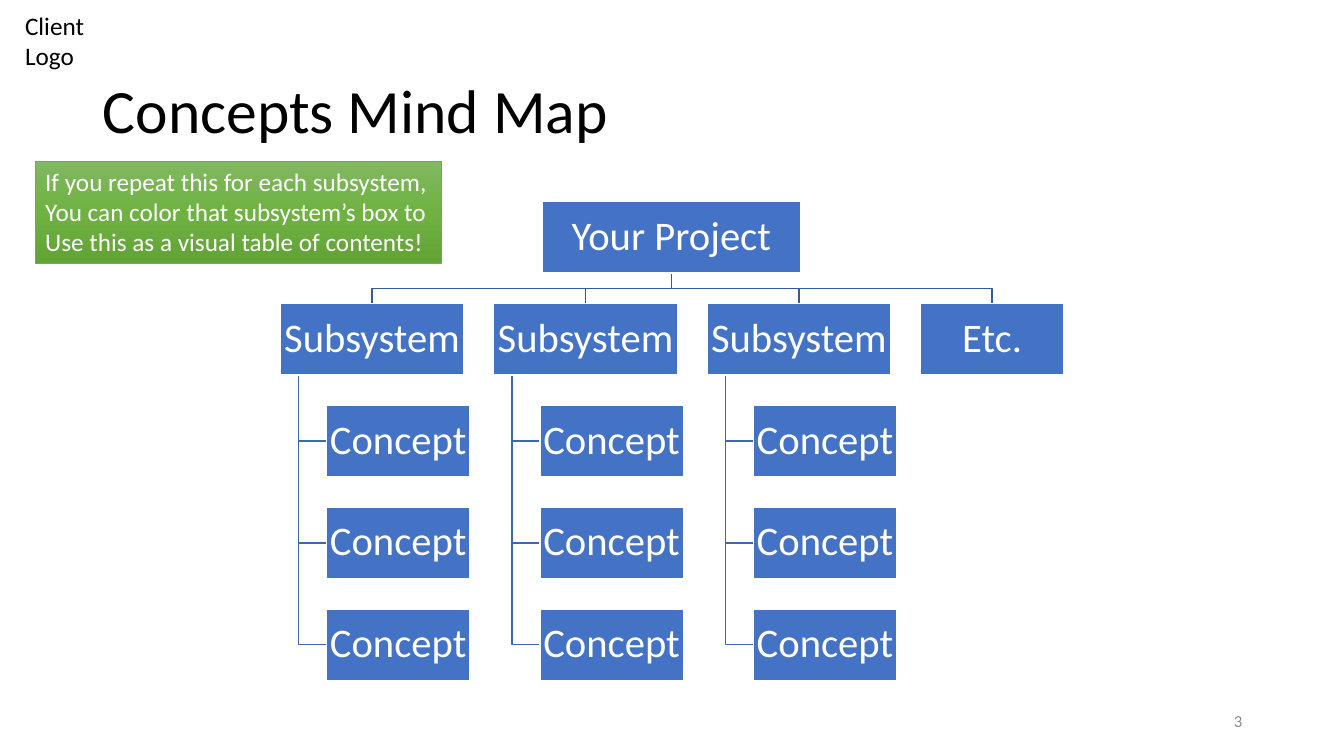
from copy import deepcopy
from dataclasses import dataclass

from pptx import Presentation
from pptx.dml.color import RGBColor
from pptx.enum.shapes import MSO_SHAPE
from pptx.enum.text import MSO_ANCHOR, MSO_AUTO_SIZE, PP_ALIGN
from pptx.oxml.ns import qn
from pptx.util import Inches, Pt

RECT = MSO_SHAPE.RECTANGLE
MIDDLE = MSO_ANCHOR.MIDDLE
TOP = MSO_ANCHOR.TOP
LEFT = PP_ALIGN.LEFT
CENTER = PP_ALIGN.CENTER
RIGHT = PP_ALIGN.RIGHT
NO_FIT = MSO_AUTO_SIZE.NONE


@dataclass(frozen=True)
class Theme:
    face: str = "Calibri"
    black: str = "000000"
    white: str = "FFFFFF"
    gray: str = "8C8C8C"
    blue: str = "4472C4"
    upper: str = "365B9D"
    lower: str = "3E67B2"
    green: str = "70AD47"
    fade: tuple = ("81B861", "6FB242", "62A336")
    title: int = 44
    node: int = 29
    body: int = 18
    small: int = 12


THEME = Theme()
ROOT = "Your Project"
TREE = [
    ("Subsystem", 1.82, ["Concept"] * 3),
    ("Subsystem", 1.82, ["Concept"] * 3),
    ("Subsystem", 1.82, ["Concept"] * 3),
    ("Etc.", 1.42, []),
]
HINT = [
    "If you repeat this for each subsystem,",
    "You can color that subsystem’s box to",
    "Use this as a visual table of contents!",
]
HIGH = 0.71
STEP = 1.01
FIRST = 2.78
PITCH = 6.35 / 3
ROOT_TOP = 2
ROOT_LEFT = 5.38
ROOT_WIDE = 2.56
LEAF_WIDE = 1.42
LEAF_IN = 0.46
STEM_IN = 0.18


def apply(target, values):
    for name, value in values.items():
        setattr(target, name, value)


def color(code):
    return RGBColor.from_string(code)


def write(frame, lines, size, ink, align=LEFT, space=1.0, **values):
    apply(frame, {"word_wrap": True, "auto_size": NO_FIT, **values})
    for index, line in enumerate(lines):
        para = frame.paragraphs[0] if index == 0 else frame.add_paragraph()
        para.text = line
        apply(para, {"alignment": align, "line_spacing": space})
        for run in para.runs:
            apply(run.font, {"name": THEME.face, "size": Pt(size)})
            run.font.color.rgb = color(ink)


def stroke(shape, ink, width):
    shape.shadow.inherit = False
    shape.line.color.rgb = color(ink)
    shape.line.width = Pt(width)


def label(slide, place, text, size, ink, **values):
    box = slide.shapes.add_textbox(*map(Inches, place))
    write(box.text_frame, [text], size, ink, **values)


def node(slide, left, top, wide, text):
    place = map(Inches, (left, top, wide, HIGH))
    box = slide.shapes.add_shape(RECT, *place)
    box.fill.solid()
    box.fill.fore_color.rgb = color(THEME.blue)
    stroke(box, THEME.white, 1)
    sides = ("left", "right", "top", "bottom")
    pads = {f"margin_{side}": Inches(0.02) for side in sides}
    write(box.text_frame, [text], THEME.node, THEME.white, CENTER, 0.9,
          vertical_anchor=MIDDLE, **pads)


def link(slide, points, ink):
    start, *rest = [(Inches(x), Inches(y)) for x, y in points]
    pen = slide.shapes.build_freeform(*start)
    pen.add_line_segments(rest, close=False)
    line = pen.convert_to_shape()
    line.fill.background()
    stroke(line, ink, 1)


def branch(slide, left, name, wide, leaves):
    top = ROOT_TOP + STEP
    base = ROOT_TOP + HIGH
    bend = (base + top) / 2
    hub = ROOT_LEFT + ROOT_WIDE / 2
    mid = left + wide / 2
    link(slide, [(hub, base), (hub, bend), (mid, bend), (mid, top)],
         THEME.upper)
    stem = left + STEM_IN
    inner = left + LEAF_IN
    for row, leaf in enumerate(leaves, 1):
        high = top + row * STEP
        level = high + HIGH / 2
        link(slide, [(stem, top + HIGH), (stem, level), (inner, level)],
             THEME.lower)
        node(slide, inner, high, LEAF_WIDE, leaf)
    node(slide, left, top, wide, name)


def hint(slide):
    box = slide.shapes.add_shape(
        RECT, *map(Inches, (0.35, 1.6, 4.03, 1.01)))
    box.fill.gradient()
    box.fill.gradient_angle = 270
    stops = box._element.spPr.find(".//" + qn("a:gsLst"))
    stops.insert(1, deepcopy(stops[0]))
    for index, stop in enumerate(box.fill.gradient_stops):
        stop.color.rgb = color(THEME.fade[index])
        stop.position = index / 2
    stroke(box, THEME.green, 0.5)
    write(box.text_frame, HINT, THEME.body, THEME.white,
          word_wrap=False, vertical_anchor=TOP)


def head(slide):
    title = slide.shapes.title
    spots = map(Inches, (0.92, 0.4, 11.5, 1.45))
    apply(title, dict(zip(("left", "top", "width", "height"), spots)))
    write(title.text_frame, ["Concepts Mind Map"], THEME.title, THEME.black,
          space=0.9, vertical_anchor=MIDDLE)


def main():
    deck = Presentation()
    apply(deck, {"slide_width": Inches(13.33), "slide_height": Inches(7.5)})
    slide = deck.slides.add_slide(deck.slide_layouts[5])
    label(slide, (0.15, 0.05, 1.11, 0.71), "Client\nLogo",
          THEME.body, THEME.black)
    head(slide)
    for col, (name, wide, leaves) in enumerate(TREE):
        branch(slide, FIRST + col * PITCH, name, wide, leaves)
    node(slide, ROOT_LEFT, ROOT_TOP, ROOT_WIDE, ROOT)
    label(slide, (9.42, 6.95, 3, 0.4), "3", THEME.small, THEME.gray,
          align=RIGHT, vertical_anchor=MIDDLE)
    hint(slide)
    deck.save("out.pptx")


if __name__ == "__main__":
    main()
